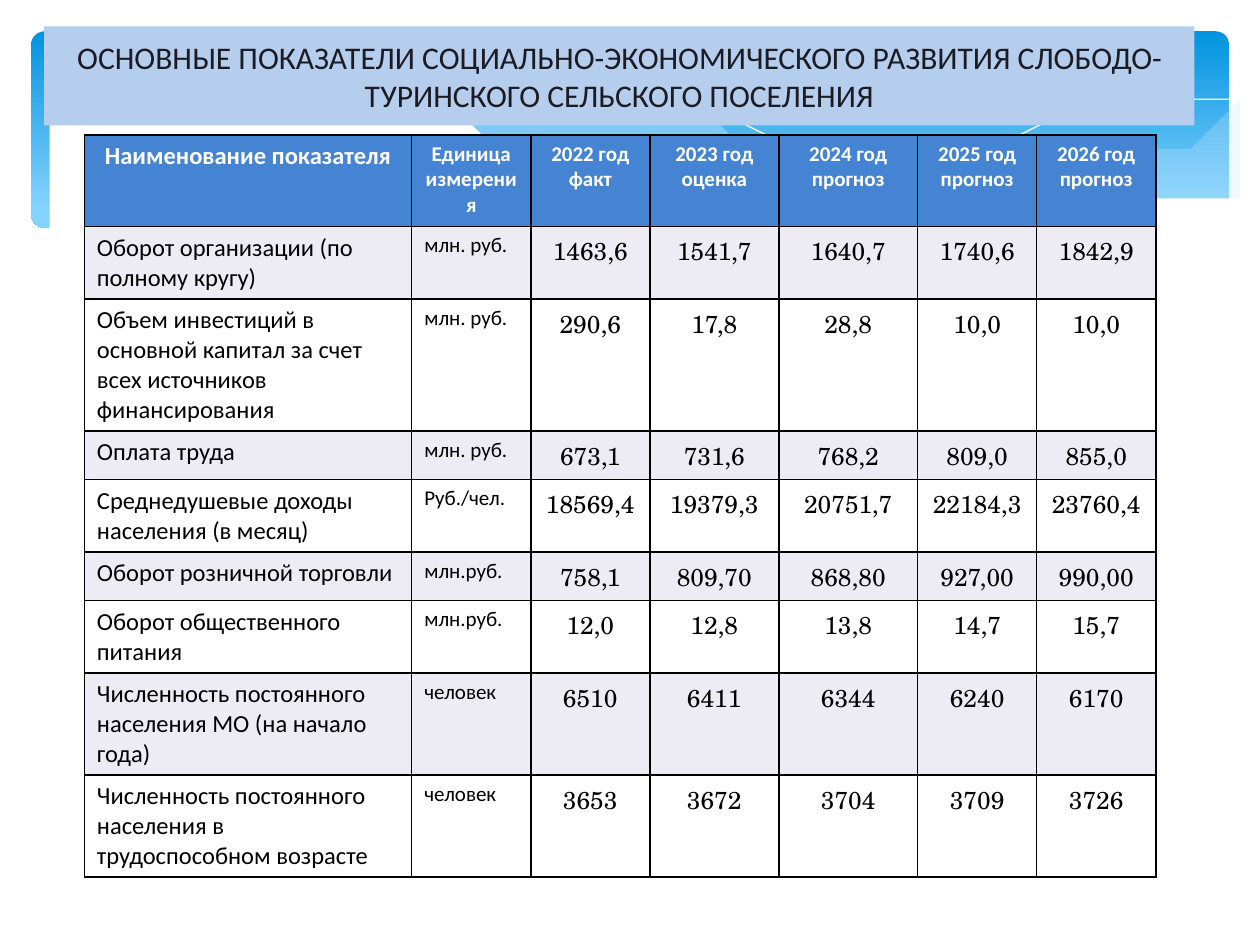
from dataclasses import dataclass

from lxml import etree
from pptx import Presentation
from pptx.dml.color import RGBColor
from pptx.enum.shapes import MSO_SHAPE
from pptx.enum.text import MSO_ANCHOR, PP_ALIGN
from pptx.oxml.ns import qn
from pptx.util import Cm, Pt


@dataclass(frozen=True)
class Theme:
    text_font: str = "Calibri"
    number_font: str = "TeX Gyre Schola"
    title_size: int = 18
    body_size: int = 14
    small_size: int = 12
    border_width: float = 0.96
    ink: str = "000000"
    white: str = "FFFFFF"
    title_ink: str = "1C1B23"
    title_fill: str = "B5CEED"
    header_fill: str = "4584D3"
    band_fill: str = "EDECF5"
    sky_top: str = "0293E0"
    sky_bottom: str = "83D3FE"
    ribbon: str = "C6E7FC"


THEME = Theme()

TITLE = ("ОСНОВНЫЕ ПОКАЗАТЕЛИ СОЦИАЛЬНО-ЭКОНОМИЧЕСКОГО РАЗВИТИЯ "
         "СЛОБОДО-ТУРИНСКОГО СЕЛЬСКОГО ПОСЕЛЕНИЯ")
HEADER = ["Наименование показателя", "Единица измерения", "2022 год факт", "2023 год оценка",
          "2024 год прогноз", "2025 год прогноз", "2026 год\nпрогноз"]
INDICATORS = [
    ["Оборот организации (по полному кругу)", "млн. руб.",
     "1463,6", "1541,7", "1640,7", "1740,6", "1842,9"],
    ["Объем инвестиций в основной капитал за счет всех источников финансирования", "млн. руб.",
     "290,6", "17,8", "28,8", "10,0", "10,0"],
    ["Оплата труда", "млн. руб.", "673,1", "731,6", "768,2", "809,0", "855,0"],
    ["Среднедушевые доходы населения (в месяц)", "Руб./чел.",
     "18569,4", "19379,3", "20751,7", "22184,3", "23760,4"],
    ["Оборот розничной торговли", "млн.руб.", "758,1", "809,70", "868,80", "927,00", "990,00"],
    ["Оборот общественного питания", "млн.руб.", "12,0", "12,8", "13,8", "14,7", "15,7"],
    ["Численность постоянного населения МО (на начало года)", "человек",
     "6510", "6411", "6344", "6240", "6170"],
    ["Численность постоянного населения в трудоспособном возрасте", "человек",
     "3653", "3672", "3704", "3709", "3726"],
]
COLUMN_WIDTHS = [6.6, 2.4, 2.4, 2.6, 2.8, 2.4, 2.4]
ROW_HEIGHTS = [1.85, 1.44, 2.64, 0.84, 1.44, 0.84, 1.44, 2.03, 2.03]

RIGHT_RIBBON = [
    (24.79, 2.39), (24.08, 2.51), (23.01, 2.72), (21.87, 3), (20.45, 3.33), (19.13, 3.63),
    (17.93, 3.86), (16.79, 4.06), (17.91, 4.19), (18.92, 4.29), (19.84, 4.37), (20.68, 4.37),
    (21.69, 4.32), (22.58, 4.22), (23.39, 4.06), (24.1, 3.86), (24.79, 3.58)]
MIDDLE_RIBBON = [
    (22.68, 4.24), (21.26, 4.04), (19.69, 3.78), (17.93, 3.4), (15.98, 2.95), (14.83, 2.69),
    (13.74, 2.46), (12.75, 2.29), (11.23, 2.11), (9.65, 2.03), (8.33, 2.06), (7.26, 2.18),
    (8.69, 2.39), (10.26, 2.69), (12.47, 3.2), (14.38, 3.63), (16.1, 3.96), (17.65, 4.19),
    (19, 4.32), (20.22, 4.39), (21.54, 4.37)]
FALLING_LINE = [
    (7.85, 2.29), (8.74, 2.13), (10.57, 2.06), (12.42, 2.13), (14.12, 2.31), (16.15, 2.62),
    (18.47, 3.05), (21.11, 3.68), (23.04, 4.22)]
RISING_LINE = [
    (15.57, 3.84), (17.07, 3.43), (19, 2.97), (20.47, 2.64), (22, 2.36), (23.11, 2.18),
    (24.16, 2.08), (24.77, 2.03)]
WHITE_WAVE = [
    (24.82, 3.56), (24.13, 3.84), (23.37, 4.04), (22.53, 4.22), (21.59, 4.32), (20.55, 4.34),
    (19.33, 4.32), (17.98, 4.19), (16.46, 3.96), (14.71, 3.66), (12.78, 3.25), (11.35, 2.9),
    (9.93, 2.59), (8.64, 2.34), (7.42, 2.16), (6.35, 2.06), (4.9, 1.98), (3.71, 2.01),
    (2.69, 2.11), (1.93, 2.26), (1.32, 2.44), (0.91, 2.59), (0.58, 2.72), (0.58, 5.69),
    (24.82, 5.69)]
WAVES = [
    (RIGHT_RIBBON, THEME.ribbon, 29),
    (MIDDLE_RIBBON, THEME.ribbon, 40),
    (FALLING_LINE, None, None),
    (RISING_LINE, None, None),
    (WHITE_WAVE, THEME.white, 100),
]


def color(code):
    return RGBColor.from_string(code)


def paint(target, code):
    target.fill.solid()
    target.fill.fore_color.rgb = color(code)


def write(frame, text, font, size, ink, bold=False, align=PP_ALIGN.LEFT):
    for index, line in enumerate(text.split("\n")):
        paragraph = frame.add_paragraph() if index else frame.paragraphs[0]
        paragraph.alignment = align
        run = paragraph.add_run()
        run.text = line
        run.font.name = font
        run.font.size = Pt(size)
        run.font.bold = bold
        run.font.color.rgb = color(ink)


def add_sky(slide):
    sky = slide.shapes.add_shape(MSO_SHAPE.ROUNDED_RECTANGLE, Cm(0.63), Cm(0.63), Cm(24.15), Cm(3.96))
    sky.adjustments[0] = 0.07
    sky.shadow.inherit = False
    sky.line.fill.background()
    sky.fill.gradient()
    sky.fill.gradient_angle = 270
    stops = zip(sky.fill.gradient_stops, [(0, THEME.sky_top), (0.9, THEME.sky_bottom)])
    for stop, (position, code) in stops:
        stop.position = position
        stop.color.rgb = color(code)


def add_wave(slide, points, code, opacity):
    builder = slide.shapes.build_freeform(*points[0], scale=Cm(1))
    builder.add_line_segments(points[1:], close=code is not None)
    wave = builder.convert_to_shape()
    wave.shadow.inherit = False
    if code is None:
        wave.fill.background()
        wave.line.color.rgb = color(THEME.white)
        wave.line.width = Pt(0)
        return
    paint(wave, code)
    wave.line.fill.background()
    fill_color = wave._element.spPr.find(qn("a:solidFill"))[0]
    etree.SubElement(fill_color, qn("a:alpha")).set("val", str(opacity * 1000))


def place_title(slide):
    title = slide.shapes.title
    title.left, title.top, title.width, title.height = Cm(0.89), Cm(0.53), Cm(23.19), Cm(2)
    outline = etree.SubElement(title._element.spPr, qn("a:prstGeom"), prst="roundRect")
    etree.SubElement(outline, qn("a:avLst"))
    paint(title, THEME.title_fill)
    title.text_frame.word_wrap = True
    title.text_frame.vertical_anchor = MSO_ANCHOR.MIDDLE
    write(title.text_frame, TITLE, THEME.text_font, THEME.title_size, THEME.title_ink,
          align=PP_ALIGN.CENTER)
    slide.shapes._spTree.append(title._element)


def add_borders(cell):
    properties = cell._tc.get_or_add_tcPr()
    for index, side in enumerate(("a:lnL", "a:lnR", "a:lnT", "a:lnB")):
        border = etree.Element(qn(side), w=str(Pt(THEME.border_width)))
        fill = etree.SubElement(border, qn("a:solidFill"))
        etree.SubElement(fill, qn("a:srgbClr"), val=THEME.ink)
        properties.insert(index, border)


def add_indicators(slide):
    rows = [HEADER] + INDICATORS
    table = slide.shapes.add_table(len(rows), len(HEADER), Cm(1.7), Cm(2.72),
                                   Cm(sum(COLUMN_WIDTHS)), Cm(sum(ROW_HEIGHTS))).table
    for column, width in zip(table.columns, COLUMN_WIDTHS):
        column.width = Cm(width)
    for r, (row, height) in enumerate(zip(rows, ROW_HEIGHTS)):
        table.rows[r].height = Cm(height)
        for c, text in enumerate(row):
            cell = table.cell(r, c)
            header, number = r == 0, r > 0 and c > 1
            small = c == 1 or (header and c > 1)
            band = THEME.band_fill if r % 2 else THEME.white
            paint(cell, THEME.header_fill if header else band)
            add_borders(cell)
            write(cell.text_frame, text,
                  THEME.number_font if number else THEME.text_font,
                  THEME.small_size if small else THEME.body_size,
                  THEME.white if header else THEME.ink, bold=header,
                  align=PP_ALIGN.CENTER if header or number else PP_ALIGN.LEFT)


def main():
    deck = Presentation()
    deck.slide_width, deck.slide_height = Cm(25.4), Cm(19.05)
    slide = deck.slides.add_slide(deck.slide_layouts[5])
    add_sky(slide)
    for wave in WAVES:
        add_wave(slide, *wave)
    place_title(slide)
    add_indicators(slide)
    deck.save("out.pptx")


if __name__ == "__main__":
    main()
